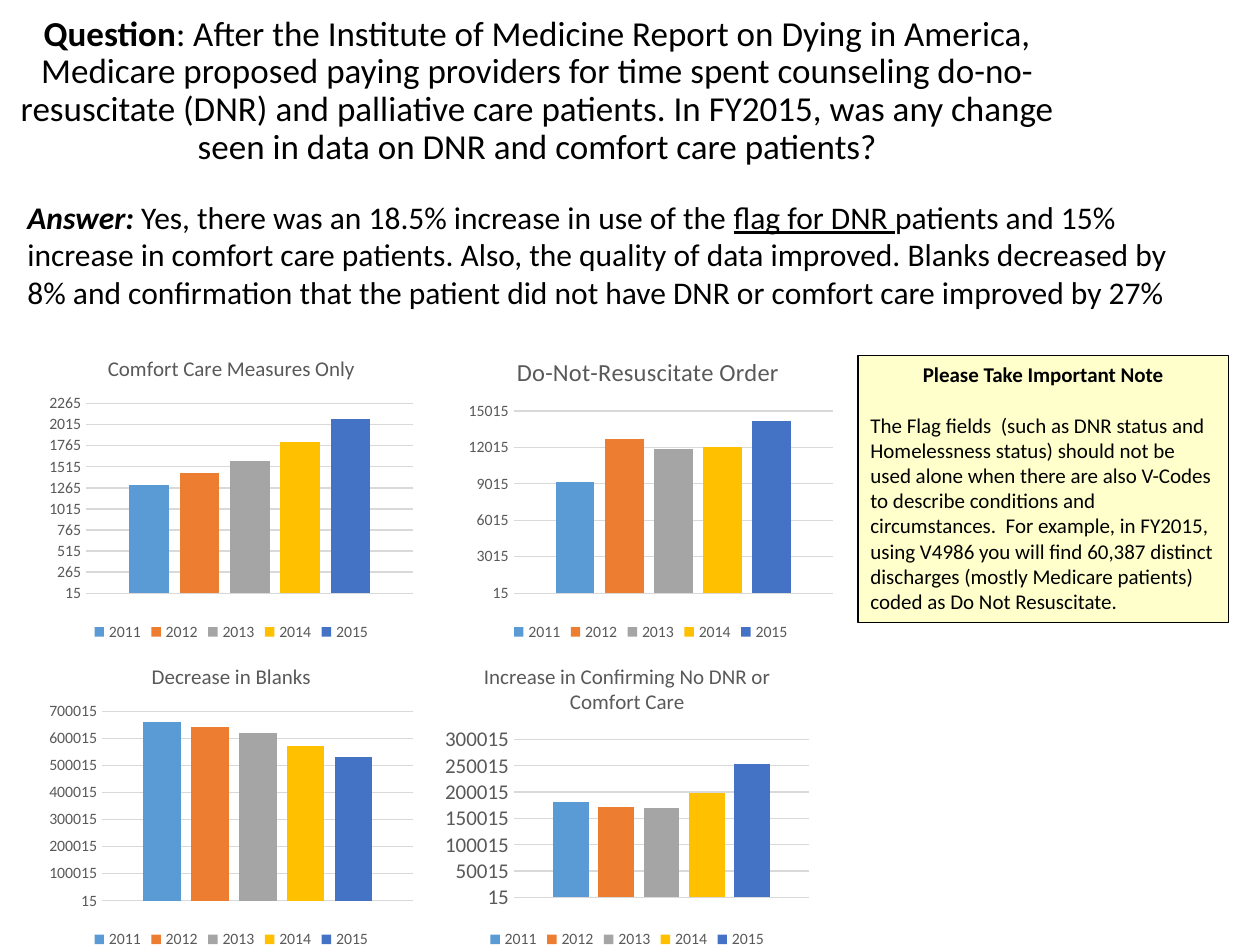
from pptx import Presentation
from pptx.chart.data import CategoryChartData
from pptx.dml.color import RGBColor
from pptx.enum.chart import XL_CHART_TYPE as ChartType, XL_LEGEND_POSITION as LegendPos, XL_TICK_MARK as Tick
from pptx.enum.shapes import MSO_SHAPE as Shape
from pptx.enum.text import MSO_ANCHOR as Anchor, PP_ALIGN as Align
from pptx.util import Pt

THEME = {
    "font": "Calibri", "text": "000000", "muted": "595959", "grid": "D9D9D9",
    "note": "FFFFCC", "question": 20, "answer": 18, "body": 12, "chart": 10, "legend": 9,
    "series": ["5B9BD5", "ED7D31", "A5A5A5", "FFC000", "4472C4"],
}

# Runs are (text, styles): b bold, i italic, u underlined
QUESTION = [
    ("Question", "b"),
    (": After the Institute of Medicine Report on Dying in America, Medicare proposed "
     "paying providers for time spent counseling do-no-resuscitate (DNR) and palliative "
     "care patients. In FY2015, was any change seen in data on DNR and comfort care patients?", ""),
]
ANSWER = [
    ("Answer: ", "bi"),
    ("Yes, there was an 18.5% increase in use of the ", ""),
    ("flag for DNR ", "u"),
    ("patients and 15% increase in comfort care patients. Also, the quality of data improved. "
     "Blanks decreased by 8% and confirmation that the patient did not have DNR or comfort "
     "care improved by 27%", ""),
]
NOTE_HEAD = [("Please Take Important Note", "b")]
NOTE_BODY = [
    ("The Flag fields  (such as DNR status and Homelessness status) should not be used alone "
     "when there are also V-Codes to describe conditions and circumstances.  For example, in "
     "FY2015, using V4986 you will find 60,387 distinct discharges (mostly Medicare patients) "
     "coded as Do Not Resuscitate.", ""),
]

YEARS = range(2011, 2016)
TOP, BOTTOM = 193, 368.8
CHART_W, CHART_H = 216.8, 176.2
# title, title size, axis label size, axis step, left, top, values
CHARTS = [
    ("Decrease in Blanks", 12, 9, None, 23.8, BOTTOM, [660000, 640000, 620000, 570000, 530000]),
    ("Do-Not-Resuscitate Order ", 14, 9, 3000, 263.5, TOP, [9200, 12700, 11900, 12000, 14200]),
    ("Comfort Care Measures Only", 12, 9, 250, 23.8, TOP, [1300, 1440, 1580, 1810, 2080]),
    ("Increase in Confirming No DNR or Comfort Care", 12, 12, 50000, 250, BOTTOM,
     [181000, 172000, 170000, 199000, 253000]),
]


def rgb(name):
    return RGBColor.from_string(THEME.get(name, name))


def set_font(font, size, color="text", styles=""):
    font.name, font.size = THEME["font"], Pt(size)
    font.color.rgb = rgb(color)
    font.bold, font.italic, font.underline = (k in styles for k in "biu")


def add_runs(p, runs, size, align=Align.LEFT):
    p.alignment = align
    for text, styles in runs:
        r = p.add_run()
        r.text = text
        set_font(r.font, size, styles=styles)


def add_text_box(slide, box, runs, size, align=Align.LEFT, anchor=Anchor.TOP):
    tf = slide.shapes.add_textbox(*map(Pt, box)).text_frame
    tf.word_wrap, tf.vertical_anchor = True, anchor
    add_runs(tf.paragraphs[0], runs, size, align)
    return tf.paragraphs[0]


def add_note(slide):
    sp = slide.shapes.add_shape(Shape.RECTANGLE, *map(Pt, (490.3, 203, 211.7, 152.6)))
    sp.shadow.inherit = False
    sp.fill.solid()
    sp.fill.fore_color.rgb = rgb("note")
    sp.line.color.rgb, sp.line.width = rgb("text"), Pt(0.75)
    tf = sp.text_frame
    tf.word_wrap, tf.vertical_anchor = True, Anchor.TOP
    add_runs(tf.paragraphs[0], NOTE_HEAD, THEME["body"], Align.CENTER)
    body = tf.add_paragraph()
    body.space_before = Pt(14.6)
    add_runs(body, NOTE_BODY, THEME["body"])


def add_column_chart(slide, title, title_size, label_size, step, left, top, values):
    data = CategoryChartData()
    data.categories = ["1"]
    for year, value in zip(YEARS, values):
        data.add_series(str(year), [value])
    chart = slide.shapes.add_chart(
        ChartType.COLUMN_CLUSTERED, *map(Pt, (left, top, CHART_W, CHART_H)), data).chart
    set_font(chart.font, THEME["chart"])

    p = chart.chart_title.text_frame.paragraphs[0]
    r = p.add_run()
    r.text = title
    set_font(r.font, title_size, "muted")
    chart.chart_title.include_in_layout = False

    chart.has_legend = True
    chart.legend.position = LegendPos.BOTTOM
    chart.legend.include_in_layout = False
    set_font(chart.legend.font, THEME["legend"], "muted")

    chart.category_axis.visible = False
    axis = chart.value_axis
    axis.minimum_scale = 15
    if step:
        axis.major_unit = step
    axis.major_tick_mark = axis.minor_tick_mark = Tick.NONE
    axis.format.line.fill.background()
    grid = axis.major_gridlines.format.line
    grid.color.rgb, grid.width = rgb("grid"), Pt(0.75)
    set_font(axis.tick_labels.font, label_size, "muted")

    plot = chart.plots[0]
    plot.gap_width, plot.overlap, plot.vary_by_categories = 219, -27, False
    for series, color in zip(plot.series, THEME["series"]):
        series.format.fill.solid()
        series.format.fill.fore_color.rgb = rgb(color)


def main():
    prs = Presentation()
    prs.slide_width, prs.slide_height = Pt(720), Pt(540)
    slide = prs.slides.add_slide(prs.slide_layouts[6])
    question = add_text_box(slide, (0.7, 0, 612.7, 104.4), QUESTION, THEME["question"],
                            Align.CENTER, Anchor.MIDDLE)
    question.line_spacing = 0.9
    for chart in CHARTS:
        add_column_chart(slide, *chart)
    add_text_box(slide, (8.6, 109.4, 666, 94.3), ANSWER, THEME["answer"])
    add_note(slide)
    prs.save("out.pptx")


if __name__ == "__main__":
    main()
